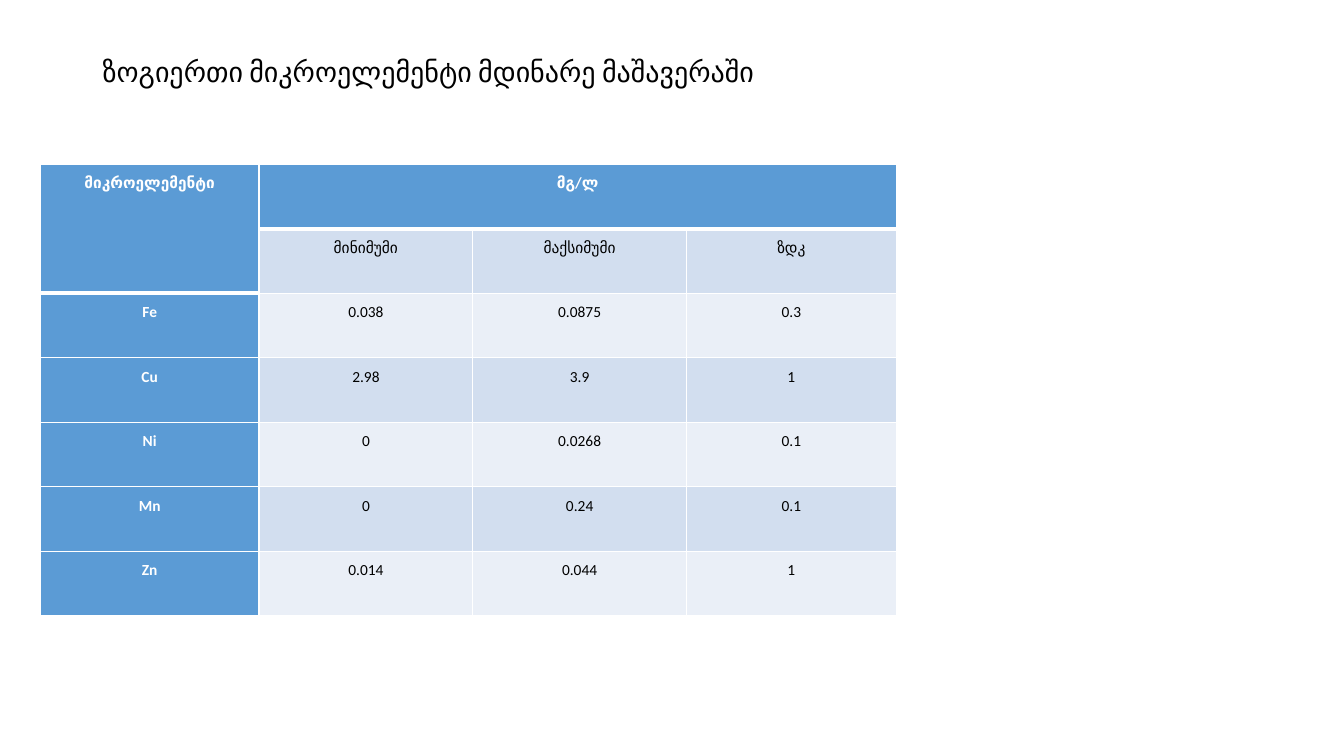
from lxml.etree import SubElement
from pptx import Presentation
from pptx.dml.color import RGBColor
from pptx.enum.text import MSO_ANCHOR, PP_ALIGN
from pptx.oxml.ns import qn
from pptx.util import Inches, Pt

COLORS = {
    "header": "5B9BD5",
    "dark_band": "D2DEEF",
    "light_band": "EAEFF7",
    "white": "FFFFFF",
    "black": "000000",
}
TITLE = "ზოგიერთი მიკროელემენტი მდინარე მაშავერაში"
ROWS = [
    ["მიკროელემენტი", "მგ/ლ", "", ""],
    ["", "მინიმუმი", "მაქსიმუმი", "ზდკ"],
    ["Fe", "0.038", "0.0875", "0.3"],
    ["Cu", "2.98", "3.9", "1"],
    ["Ni", "0", "0.0268", "0.1"],
    ["Mn", "0", "0.24", "0.1"],
    ["Zn", "0.014", "0.044", "1"],
]
COLUMN_WIDTHS = [2.17, 2.12, 2.12, 2.08]
ROW_HEIGHT = 0.64


class SlideBuilder:
    font = "Calibri"

    def __init__(self, slide):
        self.slide = slide

    def add_run(self, paragraph, text, size, color, bold=False):
        run = paragraph.add_run()
        run.text = text
        run.font.name = self.font
        run.font.size = Pt(size)
        run.font.bold = bold
        run.font.color.rgb = RGBColor.from_string(COLORS[color])

    def add_title(self, text, left, top, width, height):
        shape = self.slide.shapes.add_textbox(
            Inches(left), Inches(top), Inches(width), Inches(height))
        frame = shape.text_frame
        frame.word_wrap = True
        frame.vertical_anchor = MSO_ANCHOR.TOP
        frame.margin_top = Inches(0.18)
        paragraph = frame.paragraphs[0]
        paragraph.line_spacing = 0.9
        self.add_run(paragraph, text, 20, "black")

    def set_borders(self, cell, top, bottom):
        """Draw white cell edges; top and bottom are widths in points."""
        properties = cell._tc.get_or_add_tcPr()
        for tag, width in (("lnL", 1), ("lnR", 1), ("lnT", top), ("lnB", bottom)):
            line = SubElement(properties, qn(f"a:{tag}"), w=str(Pt(width)))
            fill = SubElement(line, qn("a:solidFill"))
            SubElement(fill, qn("a:srgbClr"), val=COLORS["white"])

    def fill_cell(self, cell, text, row, column):
        is_header = row == 0 or column == 0
        last_header_row = 1 if column == 0 else 0
        self.set_borders(
            cell,
            top=3 if row == last_header_row + 1 else 1,
            bottom=3 if row <= last_header_row else 1)
        band = "dark_band" if row % 2 else "light_band"
        cell.fill.solid()
        cell.fill.fore_color.rgb = RGBColor.from_string(
            COLORS["header" if is_header else band])
        cell.margin_left = cell.margin_right = Inches(0.07)
        cell.margin_top = cell.margin_bottom = 0
        paragraph = cell.text_frame.paragraphs[0]
        paragraph.alignment = PP_ALIGN.CENTER
        paragraph.line_spacing = 1.5
        if text:
            self.add_run(paragraph, text, 11,
                         "white" if is_header else "black", is_header)

    def add_table(self, rows, left, top, column_widths, row_height):
        table = self.slide.shapes.add_table(
            len(rows), len(column_widths), Inches(left), Inches(top),
            Inches(sum(column_widths)), Inches(row_height * len(rows))).table
        table.first_row = table.horz_banding = False
        for column, width in zip(table.columns, column_widths):
            column.width = Inches(width)
        for row_index, texts in enumerate(rows):
            table.rows[row_index].height = Inches(row_height)
            for column_index, text in enumerate(texts):
                self.fill_cell(table.cell(row_index, column_index), text,
                               row_index, column_index)
        return table


def main():
    presentation = Presentation()
    presentation.slide_width = Inches(13.33)
    presentation.slide_height = Inches(7.5)
    builder = SlideBuilder(
        presentation.slides.add_slide(presentation.slide_layouts[6]))
    builder.add_title(TITLE, 0.92, 0.4, 11.5, 1.45)
    table = builder.add_table(ROWS, 0.4, 1.63, COLUMN_WIDTHS, ROW_HEIGHT)
    table.cell(0, 0).merge(table.cell(1, 0))
    table.cell(0, 1).merge(table.cell(0, 3))
    presentation.save("out.pptx")


if __name__ == "__main__":
    main()
